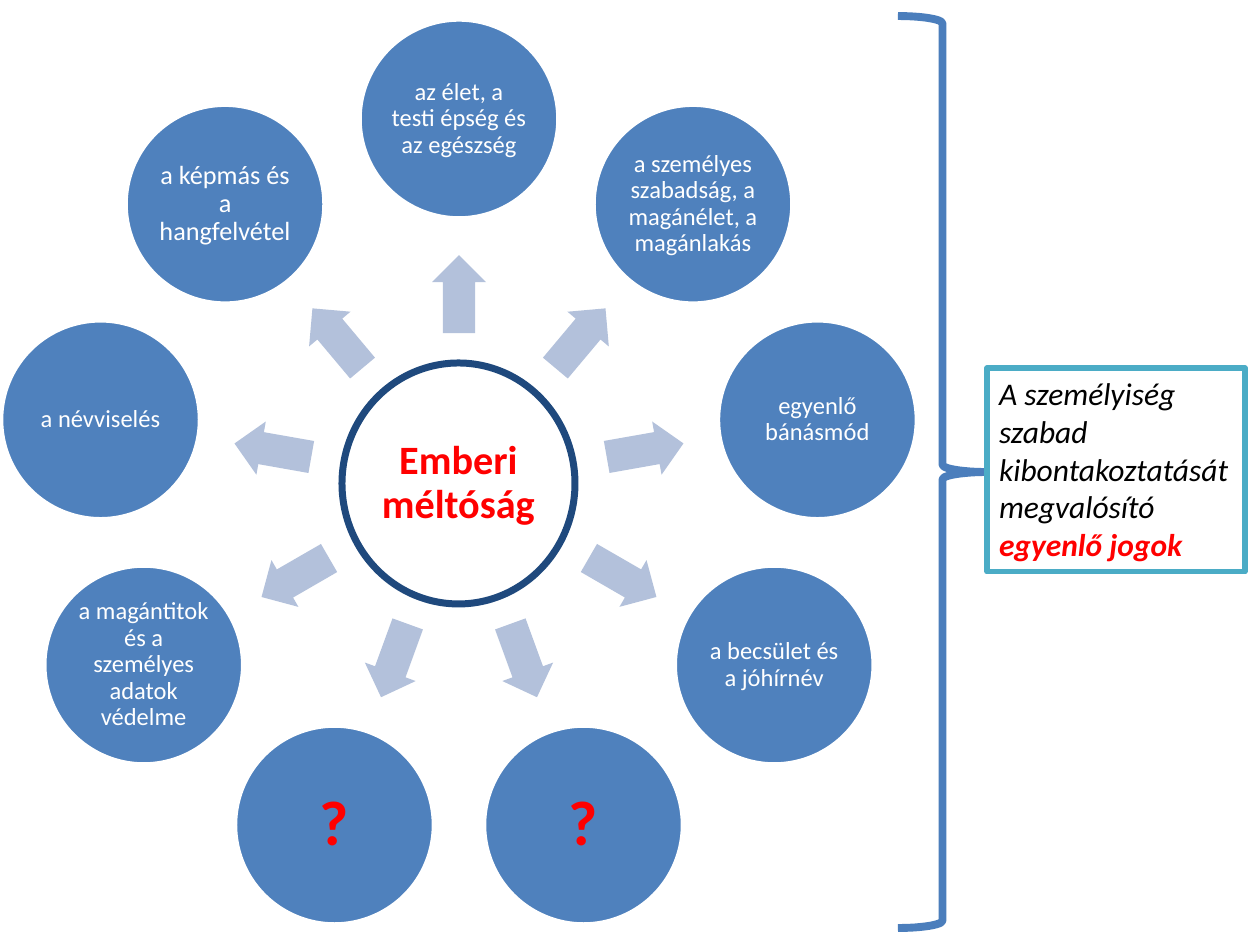
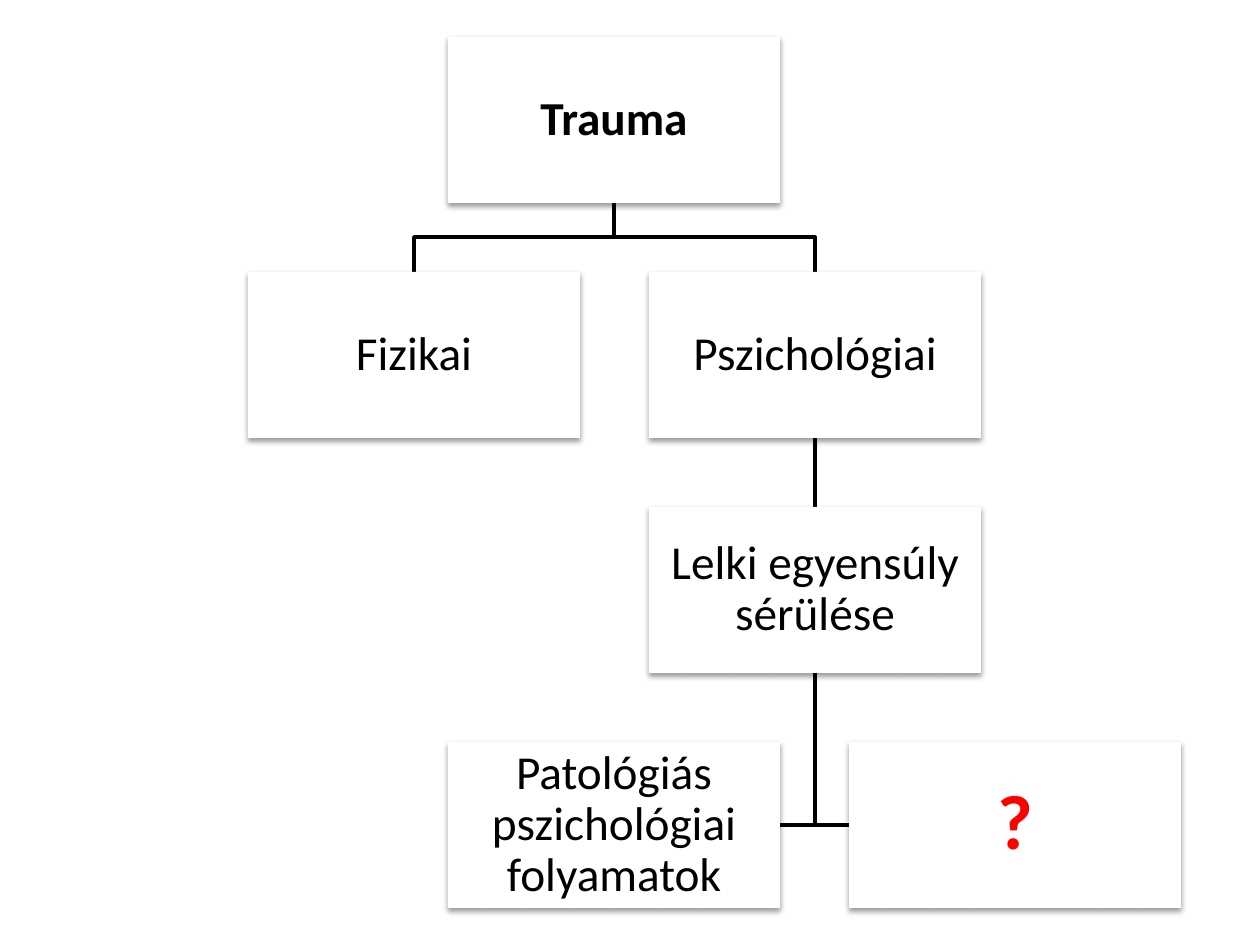
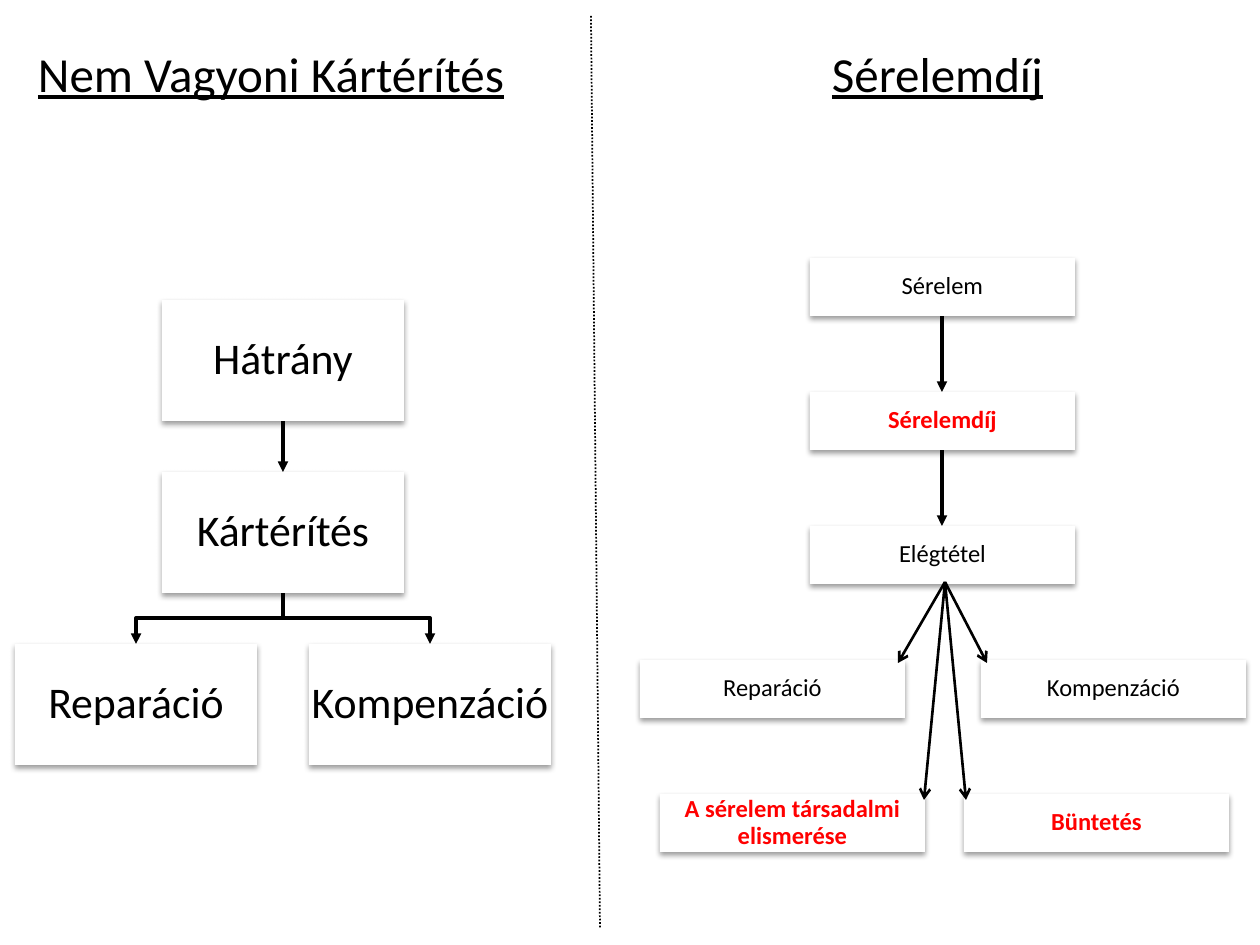
from dataclasses import dataclass
from math import cos, radians, sin

from lxml.etree import SubElement
from pptx import Presentation
from pptx.dml.color import RGBColor
from pptx.enum.dml import MSO_LINE
from pptx.enum.shapes import MSO_CONNECTOR, MSO_SHAPE
from pptx.enum.text import MSO_ANCHOR, PP_ALIGN
from pptx.oxml.ns import qn
from pptx.util import Emu, Pt


@dataclass(frozen=True)
class Theme:
    font: str = "Calibri"
    white: str = "FFFFFF"
    black: str = "000000"
    red: str = "FF0000"
    blue: str = "4F81BD"
    navy: str = "1F497D"
    pale: str = "B3C1DB"
    brace: str = "4B7EBC"
    teal: str = "4BACC6"
    small: int = 14
    note: int = 18
    hub: int = 23
    mid: int = 25
    large: int = 27
    head: int = 28
    mark: int = 36
    big: int = 44


T = Theme()
SCALE = 914400 / 126


def px(num):
    return Emu(round(num * SCALE))


def rgb(code):
    return RGBColor.from_string(code)


def paint(shape, fill=None, line=None, width=1):
    """Set fill and outline, leaving out whichever is None, and drop the shadow."""
    shape.shadow.inherit = False
    if fill:
        shape.fill.solid()
        shape.fill.fore_color.rgb = rgb(fill)
    else:
        shape.fill.background()
    if line:
        shape.line.color.rgb = rgb(line)
        shape.line.width = Pt(width)
    else:
        shape.line.fill.background()


def place(slide, kind, x, y, w, h, **look):
    shape = slide.shapes.add_shape(kind, px(x), px(y), px(w), px(h))
    paint(shape, **look)
    return shape


def write(shape, text, size=T.small, color=T.black, bold=False, italic=False,
          under=False, center=True, inset=(2, 2), wrap=True):
    """Add a run to the first paragraph of the shape and format its frame."""
    frame = shape.text_frame
    frame.word_wrap = wrap
    frame.margin_left = frame.margin_right = px(inset[0])
    frame.margin_top = frame.margin_bottom = px(inset[1])
    frame.vertical_anchor = MSO_ANCHOR.MIDDLE if center else MSO_ANCHOR.TOP
    para = frame.paragraphs[0]
    para.alignment = PP_ALIGN.CENTER if center else PP_ALIGN.LEFT
    para.line_spacing = 0.9 if center else 1.0
    run = para.add_run()
    run.text = text
    font = run.font
    font.name, font.size, font.color.rgb = T.font, Pt(size), rgb(color)
    font.bold, font.italic, font.underline = bold, italic, under


def shade(shape):
    """Give the shape a soft shadow straight below it."""
    effects = shape.element.spPr.find(qn("a:effectLst"))
    outer = SubElement(effects, qn("a:outerShdw"), blurRad="40000",
                       dist="20000", dir="5400000", rotWithShape="0")
    color = SubElement(outer, qn("a:srgbClr"), val=T.black)
    SubElement(color, qn("a:alpha"), val="38000")


def card(slide, x, y, w, h, text, **style):
    shape = place(slide, MSO_SHAPE.RECTANGLE, x, y, w, h, fill=T.white)
    shade(shape)
    write(shape, text, **style)


def link(slide, *points, width=2, tip=None, dash=None):
    """Draw a line through the points, with an arrowhead if tip is named."""
    spots = [(px(x), px(y)) for x, y in points]
    if len(spots) == 2:
        line = slide.shapes.add_connector(MSO_CONNECTOR.STRAIGHT, *spots[0], *spots[1])
        line.line.color.rgb = rgb(T.black)
        line.line.width = Pt(width)
        SubElement(line.element.spPr, qn("a:effectLst"))
    else:
        path = slide.shapes.build_freeform(*spots[0])
        path.add_line_segments(spots[1:], close=False)
        line = path.convert_to_shape()
        paint(line, line=T.black, width=width)
    if dash:
        line.line.dash_style = dash
    if tip:
        SubElement(line.element.spPr.find(qn("a:ln")), qn("a:tailEnd"), type=tip)


def fork(slide, x, top, low, ends, **style):
    """Branch from one point down to several, turning halfway."""
    turn = (top + low) // 2
    for end in ends:
        link(slide, (x, top), (x, turn), (end, turn), (end, low), **style)


def heading(slide, x, w, text):
    box = slide.shapes.add_textbox(px(x), px(37), px(w), px(72))
    write(box, text, size=T.head, under=True, center=False, inset=(13, 6), wrap=False)


def wheel(slide):
    rights = (
        "az élet, a testi épség és az egészség",
        "a személyes szabadság, a magánélet, a magánlakás",
        "egyenlő bánásmód",
        "a becsület és a jóhírnév",
        "?",
        "?",
        "a magántitok és a személyes adatok védelme",
        "a névviselés",
        "a képmás és a hangfelvétel",
    )
    x, y = 459, 483
    hub = place(slide, MSO_SHAPE.OVAL, x - 117, y - 120, 233, 241,
                line=T.navy, width=4)
    write(hub, "Emberi méltóság", size=T.hub, color=T.red, bold=True, inset=(4, 4))
    for num, text in enumerate(rights):
        turn = num * 360 / len(rights)
        dx, dy = sin(radians(turn)), -cos(radians(turn))
        arrow = place(slide, MSO_SHAPE.RIGHT_ARROW, x + 189 * dx - 39,
                      y + 189 * dy - 27, 78, 54, fill=T.pale)
        arrow.adjustments[0] = 0.6
        arrow.rotation = turn - 90
        disc = place(slide, MSO_SHAPE.OVAL, x + 364 * dx - 99, y + 364 * dy - 99,
                     198, 198, fill=T.blue, line=T.white, width=2)
        if text == "?":
            write(disc, text, size=T.mark, color=T.red, bold=True, inset=(6, 6))
        else:
            size = T.small + (num == len(rights) - 1)
            write(disc, text, size=size, color=T.white)


def claim(slide):
    place(slide, MSO_SHAPE.RIGHT_BRACE, 898, 16, 89, 912, line=T.brace, width=4.5)
    box = place(slide, MSO_SHAPE.RECTANGLE, 987, 368, 258, 204,
                fill=T.white, line=T.teal, width=3)
    style = dict(size=T.note, italic=True, center=False, inset=(12, 6))
    write(box, "A személyiség szabad kibontakoztatását megvalósító ", **style)
    write(box, "egyenlő jogok", color=T.red, bold=True, **style)


def trauma(slide):
    wide, high = 332, 166
    cols = [248 + num * 401 // 2 for num in range(4)]
    rows = [37 + num * 235 for num in range(4)]
    mids = [col + wide // 2 for col in cols]
    lows = [row + high for row in rows]

    fork(slide, mids[1], lows[0], rows[1], (mids[0], mids[2]))
    link(slide, (mids[2], lows[1]), (mids[2], rows[2]))
    level = rows[3] + high // 2
    for end in (cols[1] + wide, cols[3]):
        link(slide, (mids[2], lows[2]), (mids[2], level), (end, level))

    plain = dict(size=T.large)
    for col, row, text, style in (
        (1, 0, "Trauma", dict(size=T.large, bold=True)),
        (0, 1, "Fizikai", plain),
        (2, 1, "Pszichológiai", plain),
        (2, 2, "Lelki egyensúly sérülése", plain),
        (1, 3, "Patológiás pszichológiai folyamatok", plain),
        (3, 3, "?", dict(size=T.big, color=T.red, bold=True)),
    ):
        card(slide, cols[col], rows[row], wide, high, text, **style)


def damage(slide):
    wide, high = 242, 121
    rows = [300 + num * 172 for num in range(3)]
    left, mid, right = 15, 162, 309
    axis = mid + wide // 2
    fork(slide, axis, rows[1] + high, rows[2],
         (right + wide // 2, left + wide // 2), tip="triangle")
    link(slide, (axis, rows[0] + high), (axis, rows[1]), tip="triangle")
    for x, y, text in (
        (mid, rows[0], "Hátrány"),
        (mid, rows[1], "Kártérítés"),
        (left, rows[2], "Reparáció"),
        (right, rows[2], "Kompenzáció"),
    ):
        card(slide, x, y, wide, high, text, size=T.mid)


def redress(slide):
    wide, high = 265, 58
    rows = [258 + num * 134 for num in range(5)]
    axis = 942
    for top, low in ((0, 1), (1, 2)):
        link(slide, (axis, rows[top] + high), (axis, rows[low]), tip="triangle")
    hot = dict(color=T.red, bold=True)
    for x, row, text, style in (
        (810, 0, "Sérelem", {}),
        (810, 1, "Sérelemdíj", hot),
        (810, 2, "Elégtétel", {}),
        (981, 3, "Kompenzáció", {}),
        (640, 3, "Reparáció", {}),
        (964, 4, "Büntetés", hot),
        (660, 4, "A sérelem társadalmi elismerése", hot),
    ):
        card(slide, x, rows[row], wide, high, text, inset=(1, 1), **style)
    for end in ((898, 663), (987, 663), (966, 800), (924, 800)):
        link(slide, (945, 582), end, width=1.5, tip="arrow")


def main():
    deck = Presentation()
    deck.slide_width, deck.slide_height = px(1260), px(945)
    first, second, third = (
        deck.slides.add_slide(deck.slide_layouts[6]) for _ in range(3))
    wheel(first)
    claim(first)
    trauma(second)
    damage(third)
    heading(third, 25, 509, "Nem Vagyoni Kártérítés")
    heading(third, 819, 244, "Sérelemdíj")
    link(third, (591, 16), (600, 928), width=1, dash=MSO_LINE.ROUND_DOT)
    redress(third)
    deck.save("out.pptx")


if __name__ == "__main__":
    main()
